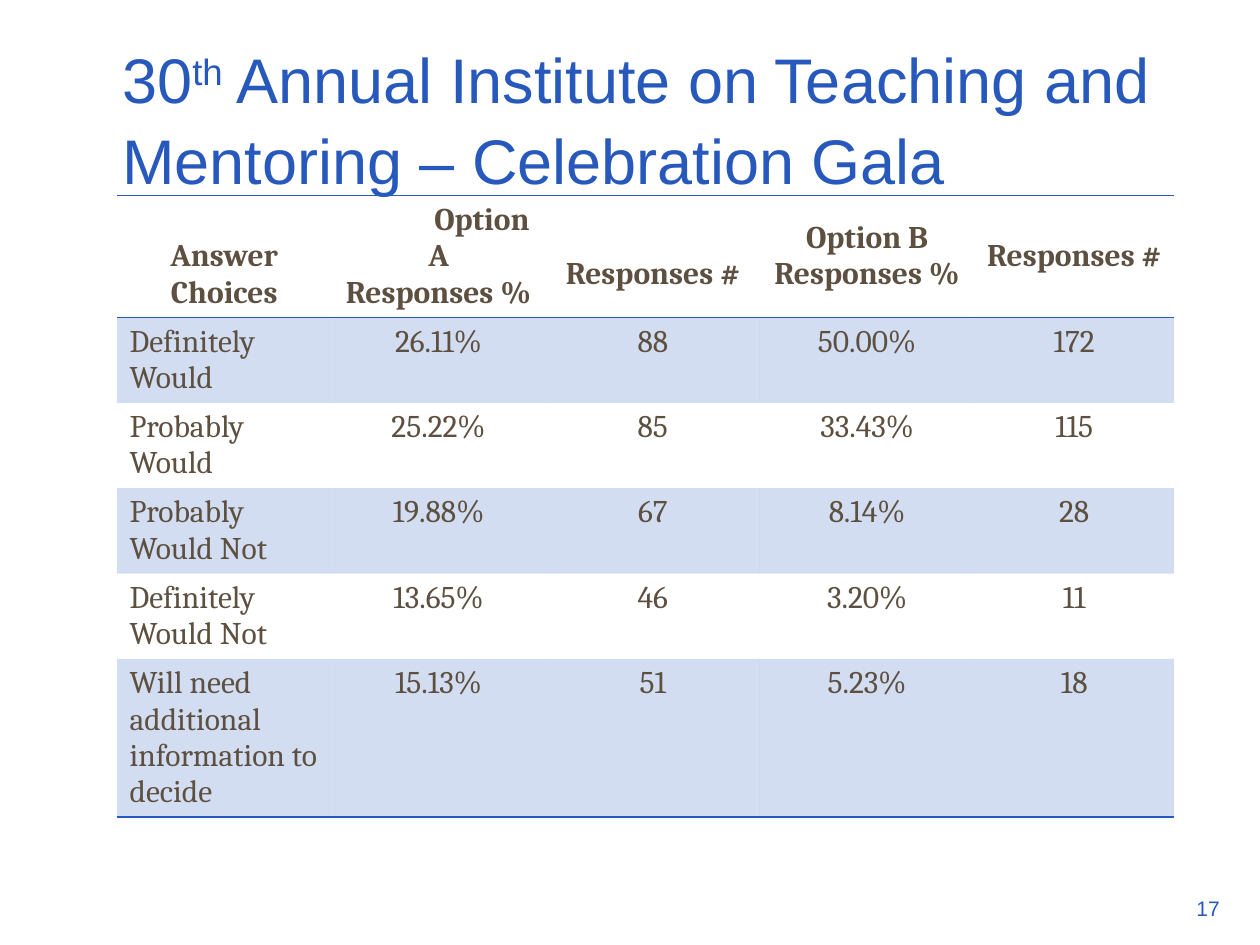
from lxml.etree import SubElement
from pptx import Presentation
from pptx.dml.color import RGBColor
from pptx.enum.text import MSO_ANCHOR as Anchor, MSO_AUTO_SIZE as AutoSize, PP_ALIGN as Align
from pptx.oxml import parse_xml
from pptx.oxml.ns import nsdecls, qn
from pptx.util import Cm, Pt

COLORS = {"blue": "2758BC", "brown": "5D5040"}
NO_STYLE = "{2D5ABB26-0587-4C30-8999-92F81FD0307C}"
HEADERS = [
    ["Answer Choices"],
    ["Option A", "Responses %"],
    ["Responses #"],
    ["Option B Responses %"],
    ["Responses #"],
]
ANSWERS = [
    ["Definitely Would", "26.11%", "88", "50.00%", "172"],
    ["Probably Would", "25.22%", "85", "33.43%", "115"],
    ["Probably Would Not", "19.88%", "67", "8.14%", "28"],
    ["Definitely Would Not", "13.65%", "46", "3.20%", "11"],
    ["Will need additional information to decide", "15.13%", "51", "5.23%", "18"],
]
COLUMN_WIDTHS = [4.32] * 4 + [4.03]
ROW_HEIGHTS = [2.46] + [1.72] * 4 + [3.18]


def add_run(paragraph, text, size, font, color, bold=False):
    """Add a formatted run to a paragraph and return it."""
    run = paragraph.add_run()
    run.text = text
    run.font.size = Pt(size)
    run.font.name = font
    run.font.bold = bold
    run.font.color.rgb = RGBColor.from_string(COLORS[color])
    return run


def place_title(title, left, top, width, height):
    """Move the title placeholder into its box and write the heading."""
    title.left, title.top, title.width, title.height = map(Cm, (left, top, width, height))
    frame = title.text_frame
    frame.auto_size = AutoSize.NONE
    frame.word_wrap = True
    frame.vertical_anchor = Anchor.MIDDLE
    heading = frame.paragraphs[0]
    heading.alignment = Align.LEFT
    heading.line_spacing = 1.06
    add_run(heading, "30", 36, "Arial", "blue")
    ordinal = add_run(heading, "th", 36, "Arial", "blue")
    ordinal.font._element.set("baseline", "30000")
    add_run(heading, " Annual Institute on Teaching and Mentoring – Celebration Gala",
            36, "Arial", "blue")


def write_cell(cell, lines, align, bold=False):
    """Write one paragraph per line into a table cell."""
    frame = cell.text_frame
    for index, line in enumerate(lines):
        paragraph = frame.add_paragraph() if index else frame.paragraphs[0]
        paragraph.alignment = align
        add_run(paragraph, line, 18, "Cambria", "brown", bold)


def tint_cell(cell):
    """Fill a cell with translucent blue."""
    cell.fill.solid()
    cell.fill.fore_color.rgb = RGBColor.from_string(COLORS["blue"])
    tint = cell._tc.tcPr.find(".//" + qn("a:srgbClr"))
    SubElement(tint, qn("a:alpha"), val="20000")


def rule_cell(cell, sides):
    """Draw blue rules on the given sides, listed in schema order."""
    properties = cell._tc.get_or_add_tcPr()
    for index, side in enumerate(sides):
        properties.insert(index, parse_xml(
            f'<a:ln{side} {nsdecls("a")} w="{Pt(1)}"><a:solidFill>'
            f'<a:srgbClr val="{COLORS["blue"]}"/></a:solidFill></a:ln{side}>'))


def add_survey_table(slide, left, top):
    """Add the survey results as a banded table at the given corner."""
    graphic = slide.shapes.add_table(
        len(ROW_HEIGHTS), len(COLUMN_WIDTHS), Cm(left), Cm(top),
        Cm(sum(COLUMN_WIDTHS)), Cm(sum(ROW_HEIGHTS)))
    survey = graphic.table
    survey._tbl.tblPr.find(qn("a:tableStyleId")).text = NO_STYLE
    for column, width in zip(survey.columns, COLUMN_WIDTHS):
        column.width = Cm(width)
    for row, height in zip(survey.rows, ROW_HEIGHTS):
        row.height = Cm(height)

    for column, lines in enumerate(HEADERS):
        header = survey.cell(0, column)
        write_cell(header, lines, Align.CENTER, bold=True)
        header.vertical_anchor = Anchor.MIDDLE
        header.fill.background()
        rule_cell(header, "TB")
    survey.cell(0, 0).vertical_anchor = Anchor.BOTTOM
    option_a = survey.cell(0, 1).text_frame.paragraphs[0]
    option_a._p.get_or_add_pPr().set("indent", str(Cm(1.75)))
    survey.cell(0, 2).margin_top = Cm(0.86)

    for row, answers in enumerate(ANSWERS, start=1):
        for column, answer in enumerate(answers):
            cell = survey.cell(row, column)
            write_cell(cell, [answer], Align.CENTER if column else Align.LEFT)
            if row % 2:
                tint_cell(cell)
            else:
                cell.fill.background()
            if row == len(ANSWERS):
                rule_cell(cell, "B")


def add_page_number(slide, left, top, width, height):
    """Add the right-aligned page number in its box."""
    frame = slide.shapes.add_textbox(*map(Cm, (left, top, width, height))).text_frame
    frame.word_wrap = True
    frame.vertical_anchor = Anchor.MIDDLE
    number = frame.paragraphs[0]
    number.alignment = Align.RIGHT
    add_run(number, "17", 12, "Arial", "blue")


def main():
    """Build the survey slide and save it."""
    deck = Presentation()
    deck.slide_width, deck.slide_height = Cm(25.4), Cm(19.05)
    slide = deck.slides.add_slide(deck.slide_layouts[5])
    add_survey_table(slide, 2.36, 3.94)
    place_title(slide.shapes.title, 2.21, 0.76, 21.62, 3.18)
    add_page_number(slide, 23.39, 17.73, 1.45, 1.14)
    deck.save("out.pptx")


if __name__ == "__main__":
    main()
